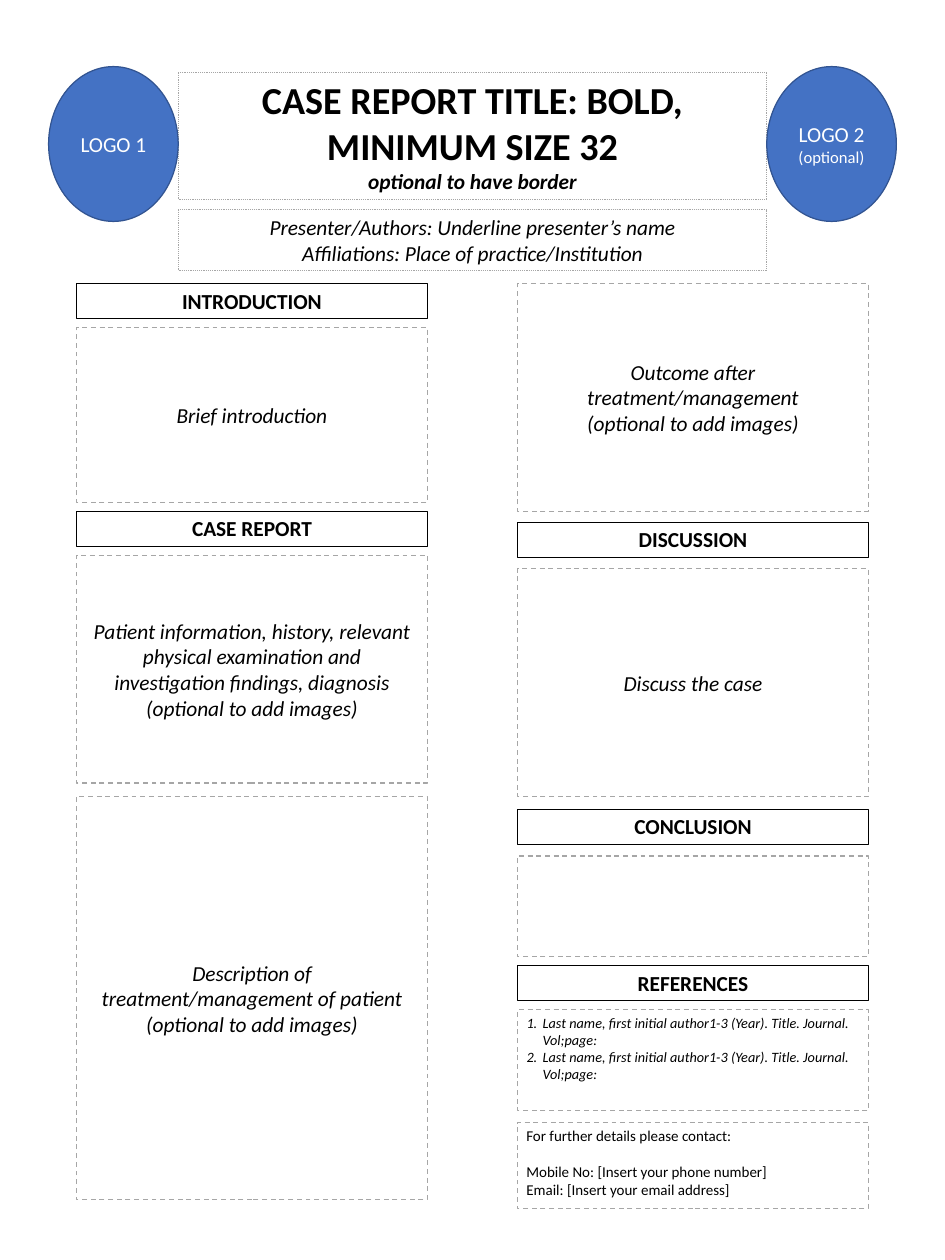
from lxml.etree import SubElement
from pptx import Presentation
from pptx.dml.color import RGBColor
from pptx.enum.dml import MSO_LINE
from pptx.enum.shapes import MSO_SHAPE
from pptx.enum.text import MSO_ANCHOR, MSO_AUTO_SIZE, PP_ALIGN
from pptx.oxml.ns import qn
from pptx.util import Inches, Pt

COLORS = {"text": "000000", "logo_text": "FFFFFF", "logo": "4472C4",
          "logo_edge": "325491", "frame": "A6A6A6", "heading": "000000"}
LEFT_COLUMN, RIGHT_COLUMN, COLUMN_WIDTH = 0.85, 5.75, 3.9
HEADING_HEIGHT = 0.39
BANNER_LEFT, BANNER_WIDTH = 1.98, 6.54
OPTIONAL_IMAGES = "(optional to add images)"


def write(frame, text, size=17.1, color="text", bold=False, italic=False,
          align=PP_ALIGN.CENTER, before=0, same_paragraph=False):
    """Add text as a new paragraph, or as a run of the last one."""
    paragraph = frame.paragraphs[-1]
    if paragraph.runs and not same_paragraph:
        paragraph = frame.add_paragraph()
    paragraph.alignment = align
    paragraph.space_before = Pt(before)
    run = paragraph.add_run()
    run.text = text
    run.font.name = "Calibri"
    run.font.size = Pt(size)
    run.font.bold = bold
    run.font.italic = italic
    run.font.color.rgb = RGBColor.from_string(COLORS[color])
    return paragraph


def style(shape, box, edge, width=1, dash=None, fill=None,
          anchor=MSO_ANCHOR.MIDDLE, fit=MSO_AUTO_SIZE.NONE):
    """Place a box, set its fill and border, and return its text frame."""
    shape.left, shape.top, shape.width, shape.height = map(Inches, box)
    if fill:
        shape.fill.solid()
        shape.fill.fore_color.rgb = RGBColor.from_string(COLORS[fill])
    else:
        shape.fill.background()
    shape.line.color.rgb = RGBColor.from_string(COLORS[edge])
    shape.line.width = Pt(width)
    if dash:
        shape.line.dash_style = dash
    frame = shape.text_frame
    frame.word_wrap = True
    frame.auto_size = fit
    frame.vertical_anchor = anchor
    return frame


presentation = Presentation()
presentation.slide_width, presentation.slide_height = Inches(10.5), Inches(14)
slide = presentation.slides.add_slide(presentation.slide_layouts[1])
shapes = slide.shapes

# Title and authors
banner_style = {"edge": "frame", "width": 0.75, "dash": MSO_LINE.ROUND_DOT,
                "anchor": MSO_ANCHOR.TOP, "fit": MSO_AUTO_SIZE.SHAPE_TO_FIT_TEXT}
title = style(shapes.title, (BANNER_LEFT, 0.8, BANNER_WIDTH, 1.42), **banner_style)
write(title, "CASE REPORT TITLE: BOLD, MINIMUM SIZE 32", size=30.5, bold=True)
write(title, "optional to have border", bold=True, italic=True)

authors_box = shapes.add_shape(MSO_SHAPE.RECTANGLE, 0, 0, 0, 0)
authors_box.shadow.inherit = False
authors = style(authors_box, (BANNER_LEFT, 2.33, BANNER_WIDTH, 0.68), **banner_style)
write(authors, "Presenter/Authors: Underline presenter’s name", italic=True)
write(authors, "Affiliations: Place of practice/Institution", italic=True)

# Logo placeholders on both sides of the title
for left, label, remark in ((0.54, "LOGO 1", None), (8.52, "LOGO 2 ", "(optional)")):
    oval = shapes.add_shape(MSO_SHAPE.OVAL, 0, 0, 0, 0)
    oval.shadow.inherit = False
    logo = style(oval, (left, 0.74, 1.44, 1.72), "logo_edge", fill="logo")
    write(logo, label, color="logo_text")
    if remark:
        write(logo, remark, size=13.3, color="logo_text", same_paragraph=True)

# Section headings
for left, top, heading in (
    (LEFT_COLUMN, 3.15, "INTRODUCTION"),
    (LEFT_COLUMN, 5.68, "CASE REPORT"),
    (RIGHT_COLUMN, 5.8, "DISCUSSION"),
    (RIGHT_COLUMN, 8.99, "CONCLUSION"),
    (RIGHT_COLUMN, 10.73, "REFERENCES"),
):
    heading_box = shapes.add_shape(MSO_SHAPE.RECTANGLE, 0, 0, 0, 0)
    heading_box.shadow.inherit = False
    frame = style(heading_box, (left, top, COLUMN_WIDTH, HEADING_HEIGHT), "heading",
                  width=0.75, anchor=MSO_ANCHOR.TOP,
                  fit=MSO_AUTO_SIZE.SHAPE_TO_FIT_TEXT)
    write(frame, heading, bold=True)

# Section contents
for left, top, height, lines in (
    (LEFT_COLUMN, 3.64, 1.94, ["Brief introduction"]),
    (LEFT_COLUMN, 6.17, 2.53, [
        "Patient information, history, relevant physical examination and "
        "investigation findings, diagnosis", OPTIONAL_IMAGES]),
    (LEFT_COLUMN, 8.85, 4.48, [
        "Description of treatment/management of patient", OPTIONAL_IMAGES]),
    (RIGHT_COLUMN, 3.15, 2.53, [
        "Outcome after treatment/management", OPTIONAL_IMAGES]),
    (RIGHT_COLUMN, 6.32, 2.53, ["Discuss the case"]),
    (RIGHT_COLUMN, 9.51, 1.12, []),
):
    section_box = shapes.add_shape(MSO_SHAPE.RECTANGLE, 0, 0, 0, 0)
    section_box.shadow.inherit = False
    section = style(section_box, (left, top, COLUMN_WIDTH, height), "frame",
                    dash=MSO_LINE.DASH)
    for line in lines:
        write(section, line, italic=True)

# Numbered references
references = style(slide.placeholders[1], (RIGHT_COLUMN, 11.22, COLUMN_WIDTH, 1.12),
                   "frame", dash=MSO_LINE.DASH, anchor=MSO_ANCHOR.TOP)
for _ in range(2):
    reference = write(
        references,
        "Last name, first initial author1-3 (Year). Title. Journal. Vol;page:",
        size=11.4, italic=True, align=PP_ALIGN.LEFT)
    properties = reference._p.get_or_add_pPr()
    properties.set("marL", str(Inches(0.18)))
    properties.set("indent", str(-Inches(0.18)))
    SubElement(properties, qn("a:buFont"), typeface="+mj-lt")
    SubElement(properties, qn("a:buAutoNum"), type="arabicPeriod")

# Contact details
contact_box = shapes.add_shape(MSO_SHAPE.RECTANGLE, 0, 0, 0, 0)
contact_box.shadow.inherit = False
contact = style(contact_box, (RIGHT_COLUMN, 12.47, COLUMN_WIDTH, 0.96), "frame",
                dash=MSO_LINE.DASH, anchor=MSO_ANCHOR.TOP)
for line, gap in (("For further details please contact:", 0),
                  ("Mobile No: [Insert your phone number]", 14.5),
                  ("Email: [Insert your email address]", 0)):
    write(contact, line, size=12, align=PP_ALIGN.LEFT, before=gap)

presentation.save("out.pptx")
